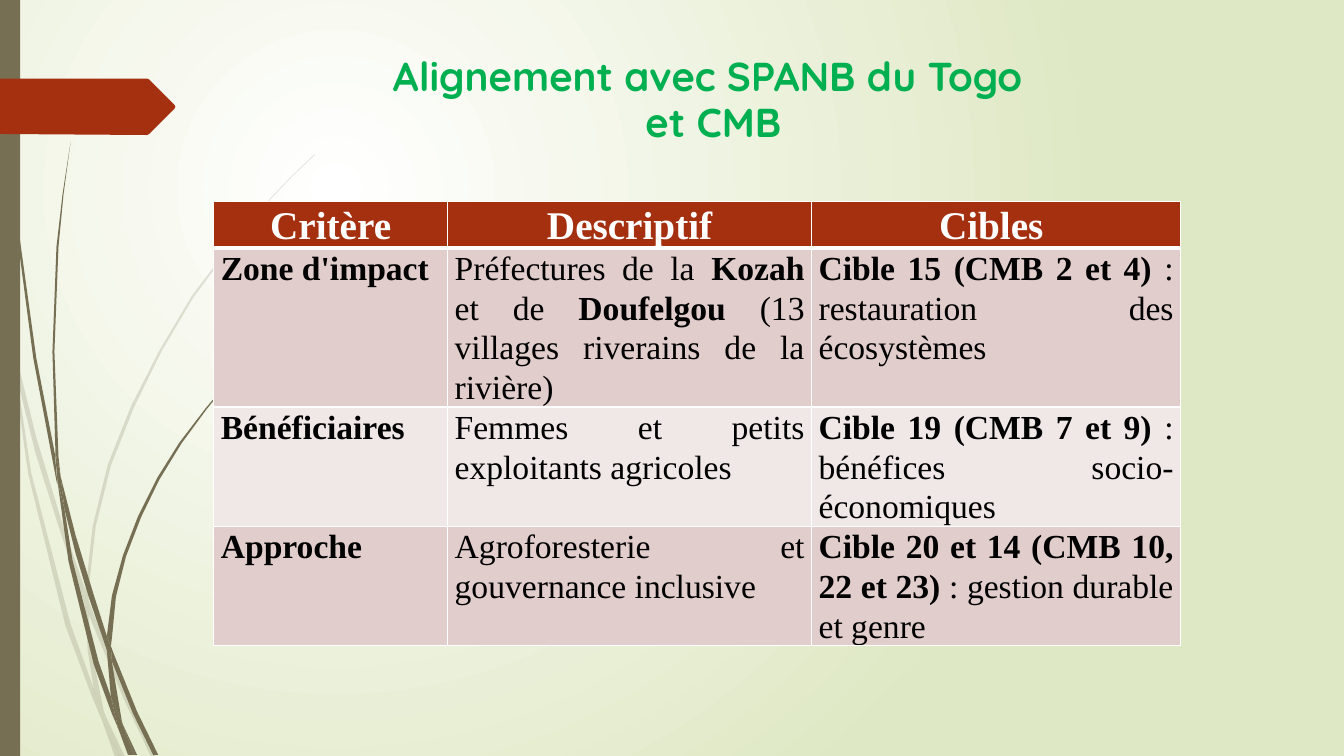
"""Build the slide that aligns the project with the SPANB of Togo and the CMB."""
from copy import deepcopy
from dataclasses import dataclass

from lxml import etree
from pptx import Presentation
from pptx import util as u
from pptx.dml.color import RGBColor
from pptx.enum import shapes, text
from pptx.oxml.ns import qn

WHITE = RGBColor(0xFF, 0xFF, 0xFF)
BLACK = RGBColor(0x00, 0x00, 0x00)
PALE_GREEN = RGBColor(0xDF, 0xE8, 0xC4)
GREEN = RGBColor(0x00, 0xB0, 0x50)
OLIVE = RGBColor(0x76, 0x6F, 0x54)
RUST = RGBColor(0xA5, 0x30, 0x10)
DARK_BAND = RGBColor(0xE1, 0xCD, 0xCC)
LIGHT_BAND = RGBColor(0xF0, 0xE8, 0xE7)

TITLE_FONT = {"name": "Quicksand", "size": u.Pt(28.8), "bold": True}
HEADER_FONT = {"name": "Times New Roman", "size": u.Pt(28)}
BODY_FONT = {"name": "Times New Roman", "size": u.Pt(24)}
CELL_MARGINS = {"margin_left": u.Inches(0.07), "margin_right": u.Inches(0.07),
                "margin_top": 0, "margin_bottom": 0}


@dataclass(frozen=True)
class Outline:
    points: list
    color: RGBColor = OLIVE
    opacity: int = 100


@dataclass(frozen=True)
class Words:
    content: str
    bold: bool = False


@dataclass(frozen=True)
class Band:
    cells: list
    fill: RGBColor
    font: dict
    color: RGBColor = BLACK
    alignment: text.PP_ALIGN = text.PP_ALIGN.JUSTIFY
    bottom_line: float = 1


PALE_BLADES = [
    [(0.11, 3.5), (0.09, 3.22), (0, 2.82), (0, 2.99), (0.1, 3.44)],
    [(0.58, 5.22), (0.84, 5.99), (0.85, 5.86), (0.62, 5.2), (0.36, 4.34), (0.14, 3.45),
     (0.17, 3.76), (0.35, 4.49)],
    [(0.92, 6.07), (0.88, 5.96), (0.88, 6.1), (1.23, 6.94), (1.5, 7.51), (1.55, 7.51),
     (1.27, 6.92)],
    [(1.19, 7.51), (1.24, 7.51), (1.05, 7.11)],
    [(0.93, 6.83), (0.7, 6.19), (0.31, 4.69), (0.17, 3.76), (0.11, 3.5), (0.28, 4.7),
     (0.65, 6.21), (0.92, 6.93), (1.01, 7.14), (0.99, 7.07)],
    [(0.84, 5.99), (0.87, 6.46), (0.93, 6.83), (0.96, 6.92), (1.05, 7.11), (1.03, 7.06),
     (0.91, 6.46), (0.88, 6.1), (0.88, 6.08)],
    [(0.88, 5.84), (0.95, 5.22), (1.1, 4.62), (1.33, 4.04), (1.6, 3.49), (1.92, 2.95),
     (2.29, 2.45), (2.68, 1.98), (2.9, 1.75), (3.12, 1.54), (3.12, 1.53), (2.89, 1.75),
     (2.68, 1.97), (2.28, 2.44), (1.9, 2.94), (1.58, 3.48), (1.3, 4.03), (1.07, 4.61),
     (0.92, 5.22), (0.85, 5.84), (0.85, 5.86), (0.88, 5.96)],
    [(1.01, 7.14), (1.14, 7.51), (1.19, 7.51)],
    [(0.88, 6.08), (0.88, 6.1), (0.88, 5.96), (0.85, 5.86), (0.84, 5.99)],
    [(0.96, 6.92), (0.93, 6.83), (0.99, 7.07), (1.01, 7.14), (1.19, 7.51), (1.05, 7.11)],
]
DARK_BLADES = [
    [(0.07, 1.1), (0.17, 2.33), (0.33, 3.55), (0.56, 4.77), (0.57, 4.81), (0.55, 4.57),
     (0.55, 4.53), (0.36, 3.55), (0.19, 2.32), (0.08, 1.09), (0.05, 0.48), (0.04, 0),
     (0.03, 0), (0.04, 0.48)],
    [(0.88, 5.92), (1.06, 6.45), (1.06, 6.33), (1.06, 6.31), (0.93, 5.9), (0.75, 5.31),
     (0.6, 4.72), (0.64, 5.05), (0.75, 5.49)],
    [(1.13, 6.49), (1.1, 6.41), (1.11, 6.56), (1.32, 7.08), (1.52, 7.49), (1.57, 7.49),
     (1.36, 7.06)],
    [(1.1, 6.91), (0.98, 6.57), (0.72, 5.56), (0.64, 5.05), (0.57, 4.77), (0.68, 5.57),
     (0.93, 6.59), (1.11, 7.08), (1.17, 7.22), (1.16, 7.17)],
    [(0.6, 4.72), (0.58, 4.53), (0.54, 3.49), (0.58, 2.45), (0.63, 1.93), (0.7, 1.41),
     (0.62, 1.93), (0.56, 2.45), (0.52, 3.49), (0.55, 4.49)],
    [(1.33, 7.49), (1.36, 7.49), (1.22, 7.19)],
    [(0.57, 4.77), (0.64, 5.05), (0.6, 4.72), (0.55, 4.49), (0.55, 4.53)],
    [(1.11, 6.33), (1.15, 5.92), (1.25, 5.52), (1.4, 5.13), (1.58, 4.76), (1.8, 4.4),
     (2.05, 4.06), (2.31, 3.74), (2.45, 3.59), (2.61, 3.44), (2.6, 3.44), (2.45, 3.58),
     (2.31, 3.73), (2.04, 4.05), (1.78, 4.39), (1.56, 4.74), (1.37, 5.12), (1.22, 5.51),
     (1.11, 5.91), (1.06, 6.31), (1.1, 6.41)],
    [(1.17, 7.22), (1.27, 7.49), (1.31, 7.49)],
    [(1.06, 6.45), (1.1, 6.91), (1.16, 7.06), (1.22, 7.19), (1.21, 7.16), (1.11, 6.56),
     (1.09, 6.51)],
    [(1.06, 6.45), (1.09, 6.51), (1.11, 6.56), (1.1, 6.41), (1.06, 6.31)],
    [(1.16, 7.06), (1.1, 6.91), (1.16, 7.17), (1.17, 7.22), (1.3, 7.49), (1.33, 7.49),
     (1.22, 7.19)],
]
ARROW = [(0, 0.78), (1.46, 0.78), (1.48, 0.79), (1.73, 1.04), (1.74, 1.06), (1.73, 1.08),
         (1.48, 1.33), (1.46, 1.34), (0, 1.33)]

BANDS = [
    Band([[Words("Critère", True)], [Words("Descriptif", True)], [Words("Cibles ", True)]],
         RUST, HEADER_FONT, WHITE, text.PP_ALIGN.CENTER, 3),
    Band([[Words("Zone d'impact", True)],
          [Words("Préfectures de la "), Words("Kozah", True), Words(" et de "),
           Words("Doufelgou", True), Words(" (13 villages riverains de la rivière)")],
          [Words("Cible 15 (CMB 2 et 4)", True), Words(" : restauration des écosystèmes")]],
         DARK_BAND, BODY_FONT),
    Band([[Words("Bénéficiaires", True)], [Words("Femmes et petits exploitants agricoles")],
          [Words("Cible 19 (CMB 7 et 9)", True), Words(" : bénéfices socio-économiques")]],
         LIGHT_BAND, BODY_FONT),
    Band([[Words("Approche", True)], [Words("Agroforesterie et gouvernance inclusive")],
          [Words("Cible 20 et 14 (CMB 10, 22 et 23)", True),
           Words(" : gestion durable et genre")]],
         DARK_BAND, BODY_FONT),
]


def apply(target: object, values: dict) -> None:
    for name, value in values.items():
        setattr(target, name, value)


def paint(shape, color: RGBColor, opacity: int = 100) -> None:
    shape.shadow.inherit = False
    shape.fill.solid()
    shape.fill.fore_color.rgb = color
    shape.line.fill.background()
    if opacity < 100:
        solid = shape._element.spPr.find(qn("a:solidFill"))
        etree.SubElement(solid[0], qn("a:alpha"), val=str(opacity * 1000))


def draw_outline(slide, outline: Outline) -> None:
    points = [(u.Inches(x), u.Inches(y)) for x, y in outline.points]
    builder = slide.shapes.build_freeform(*points[0])
    builder.add_line_segments(points[1:], close=True)
    paint(builder.convert_to_shape(), outline.color, outline.opacity)


def draw_background(slide) -> None:
    fill = slide.background.fill
    fill.gradient()
    for stop, color, position in zip(fill.gradient_stops, (WHITE, PALE_GREEN), (0, 1)):
        stop.color.rgb = color
        stop.position = position
    gradient = slide._element.find(".//" + qn("a:gradFill"))
    gradient.remove(gradient.find(qn("a:lin")))
    circle = etree.SubElement(gradient, qn("a:path"), {"path": "circle"})
    etree.SubElement(circle, qn("a:fillToRect"), l="50000", t="50000", r="100000", b="100000")


def draw_title(slide) -> None:
    title = slide.shapes.title
    apply(title, {"left": u.Inches(2.2), "top": u.Inches(0.48),
                  "width": u.Inches(9.75), "height": u.Inches(1.03)})
    frame = title.text_frame
    frame.text = "Alignement avec SPANB du Togo \vet CMB"
    apply(frame, {"word_wrap": True, "auto_size": text.MSO_AUTO_SIZE.NONE,
                  "vertical_anchor": text.MSO_ANCHOR.MIDDLE})
    paragraph = frame.paragraphs[0]
    apply(paragraph, {"alignment": text.PP_ALIGN.CENTER, "line_spacing": 0.95})
    for run in paragraph.runs:
        apply(run.font, TITLE_FONT)
        run.font.color.rgb = GREEN
    line_break = paragraph._p.find(qn("a:br"))
    line_break.append(deepcopy(paragraph.runs[0]._r.rPr))


def draw_cell(cell, words: list, band: Band) -> None:
    apply(cell, CELL_MARGINS)
    properties = cell._tc.get_or_add_tcPr()
    for side in "LRTB":
        width = band.bottom_line if side == "B" else 1
        line = etree.SubElement(properties, qn(f"a:ln{side}"), w=str(u.Pt(width)))
        solid = etree.SubElement(line, qn("a:solidFill"))
        etree.SubElement(solid, qn("a:srgbClr"), val=str(WHITE))
    cell.fill.solid()
    cell.fill.fore_color.rgb = band.fill
    paragraph = cell.text_frame.paragraphs[0]
    apply(paragraph, {"alignment": band.alignment, "line_spacing": 1.07})
    for part in words:
        run = paragraph.add_run()
        run.text = part.content
        apply(run.font, {**band.font, "bold": part.bold})
        run.font.color.rgb = band.color


def draw_table(slide) -> None:
    frame = slide.shapes.add_table(len(BANDS), 3, u.Inches(2.12), u.Inches(2),
                                   u.Inches(9.59), u.Inches(4.69))
    for column, width in zip(frame.table.columns, (2.32, 3.61, 3.66)):
        column.width = u.Inches(width)
    for row, band in zip(frame.table.rows, BANDS):
        row.height = u.Inches(0.41)
        for cell, words in zip(row.cells, band.cells):
            draw_cell(cell, words, band)
    frame.height = u.Inches(4.69)


def main() -> None:
    presentation = Presentation()
    presentation.slide_width, presentation.slide_height = u.Inches(13.33), u.Inches(7.5)
    slide = presentation.slides.add_slide(presentation.slide_layouts[5])
    draw_background(slide)
    for blade in PALE_BLADES:
        draw_outline(slide, Outline(blade, opacity=20))
    for blade in DARK_BLADES:
        draw_outline(slide, Outline(blade))
    bar = slide.shapes.add_shape(shapes.MSO_SHAPE.RECTANGLE, 0, 0, u.Inches(0.2), u.Inches(7.5))
    paint(bar, OLIVE)
    draw_outline(slide, Outline(ARROW, RUST))
    draw_title(slide)
    draw_table(slide)
    presentation.save("out.pptx")


if __name__ == "__main__":
    main()
